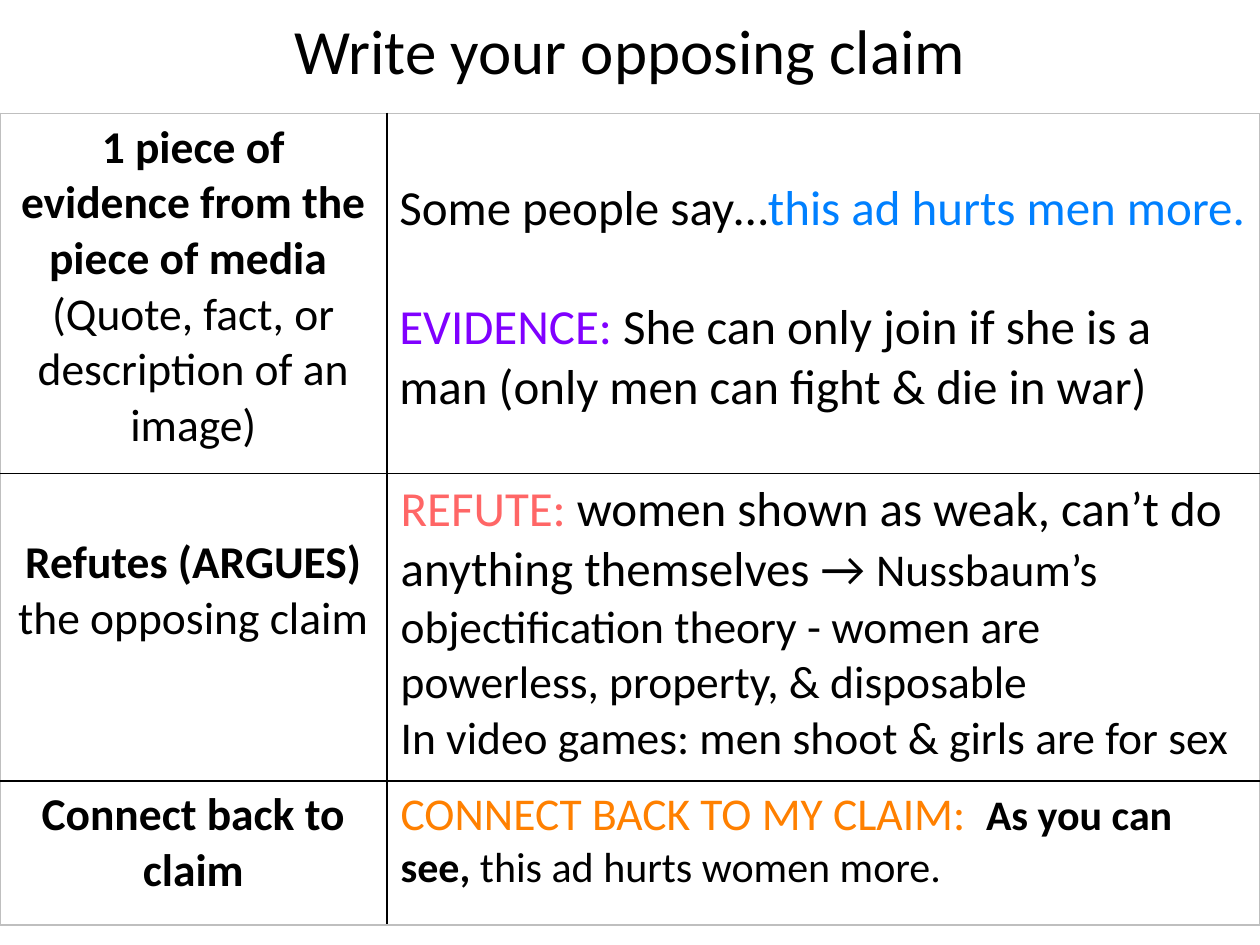
from pptx import Presentation, util as u
from pptx.dml.color import RGBColor
from pptx.enum import text
from lxml import etree

INK = dict(black="000000", blue="0080FF", violet="8000FF", red="FF6666",
           orange="FF8000", edge="BFBFBF")
NS = "http://schemas.openxmlformats.org/drawingml/2006/main"
W, H = u.Inches(10), u.Inches(7.5)


def style(font, size, ink="black", bold=False):
    font.name, font.size, font.bold = "Calibri", u.Pt(size), bold
    font.color.rgb = RGBColor.from_string(INK[ink])


def border(cell, side, ink):
    line = etree.SubElement(cell._tc.get_or_add_tcPr(), f"{{{NS}}}{side}", w="12700")
    fill = etree.SubElement(line, f"{{{NS}}}solidFill")
    etree.SubElement(fill, f"{{{NS}}}srgbClr", val=INK[ink])


prs = Presentation()
prs.slide_width, prs.slide_height = W, H
slide = prs.slides.add_slide(prs.slide_layouts[5])

# Title
title = slide.shapes.title
title.left, title.top = int(W * 0.05), u.Inches(-0.16)
title.width, title.height = int(W * 0.9), u.Inches(1.11)
title.text_frame.text = "Write your opposing claim"
title.text_frame.vertical_anchor = text.MSO_ANCHOR.MIDDLE
head = title.text_frame.paragraphs[0]
head.alignment = text.PP_ALIGN.CENTER
style(head.font, 36)

# Each cell: top margin in inches, gap between paragraphs in points, paragraphs
# Each run: words, size, colour, bold
rows = [
    [(0.05, 0, [[("1 piece of evidence from the piece of media ", 26, "black", True)],
                [("(Quote, fact, or description of an image)", 26, "black", False)]]),
     (0.52, 34, [[("Some people say…", 28, "black", False),
                  ("this ad hurts men more.", 28, "blue", False)],
                 [("EVIDENCE: ", 28, "violet", False),
                  ("She can only join if she is a man (only men can fight & die in war)",
                   28, "black", False)]])],
    [(0.49, 0, [[("Refutes (ARGUES) ", 26, "black", True),
                 ("the opposing claim", 26, "black", False)]]),
     (0.05, 0, [[("REFUTE: ", 28, "red", False),
                 ("women shown as weak, can’t do anything themselves → ",
                  28, "black", False),
                 ("Nussbaum’s objectification theory - women are powerless, "
                  "property, & disposable", 26, "black", False)],
                [("In video games: men shoot & girls are for sex",
                  26, "black", False)]])],
    [(0.05, 0, [[("Connect back to claim", 26, "black", True)]]),
     (0.05, 0, [[("CONNECT BACK TO MY CLAIM: ", 26, "orange", False),
                 (" As you can see, ", 24, "black", True),
                 ("this ad hurts women more.", 24, "black", False)]])],
]
wide, tall = [3.07, 6.93], [2.86, 2.44, 1.14]

# Table grid
table = slide.shapes.add_table(len(tall), len(wide), 0, int(H * 0.12), W,
                               u.Inches(sum(tall))).table
table.first_row = table.horz_banding = False
for col, size in zip(table.columns, wide):
    col.width = u.Inches(size)
for row, size in zip(table.rows, tall):
    row.height = u.Inches(size)

# Cells
for r, row in enumerate(rows):
    for c, (top, gap, paras) in enumerate(row):
        cell = table.cell(r, c)
        cell.margin_top = u.Inches(top)
        cell.margin_left = u.Inches(0.11 if c and r else 0.1)
        cell.vertical_anchor = text.MSO_ANCHOR.TOP
        outer = {"lnL": c == 0, "lnR": c == len(wide) - 1,
                 "lnT": r == 0, "lnB": r == len(tall) - 1}
        for side, edge in outer.items():
            border(cell, side, "edge" if edge else "black")
        cell.fill.background()
        for i, runs in enumerate(paras):
            para = cell.text_frame.add_paragraph() if i else cell.text_frame.paragraphs[0]
            para.alignment = text.PP_ALIGN.LEFT if c else text.PP_ALIGN.CENTER
            if i and gap:
                para.space_before = u.Pt(gap)
            for words, *look in runs:
                run = para.add_run()
                run.text = words
                style(run.font, *look)

prs.save("out.pptx")
